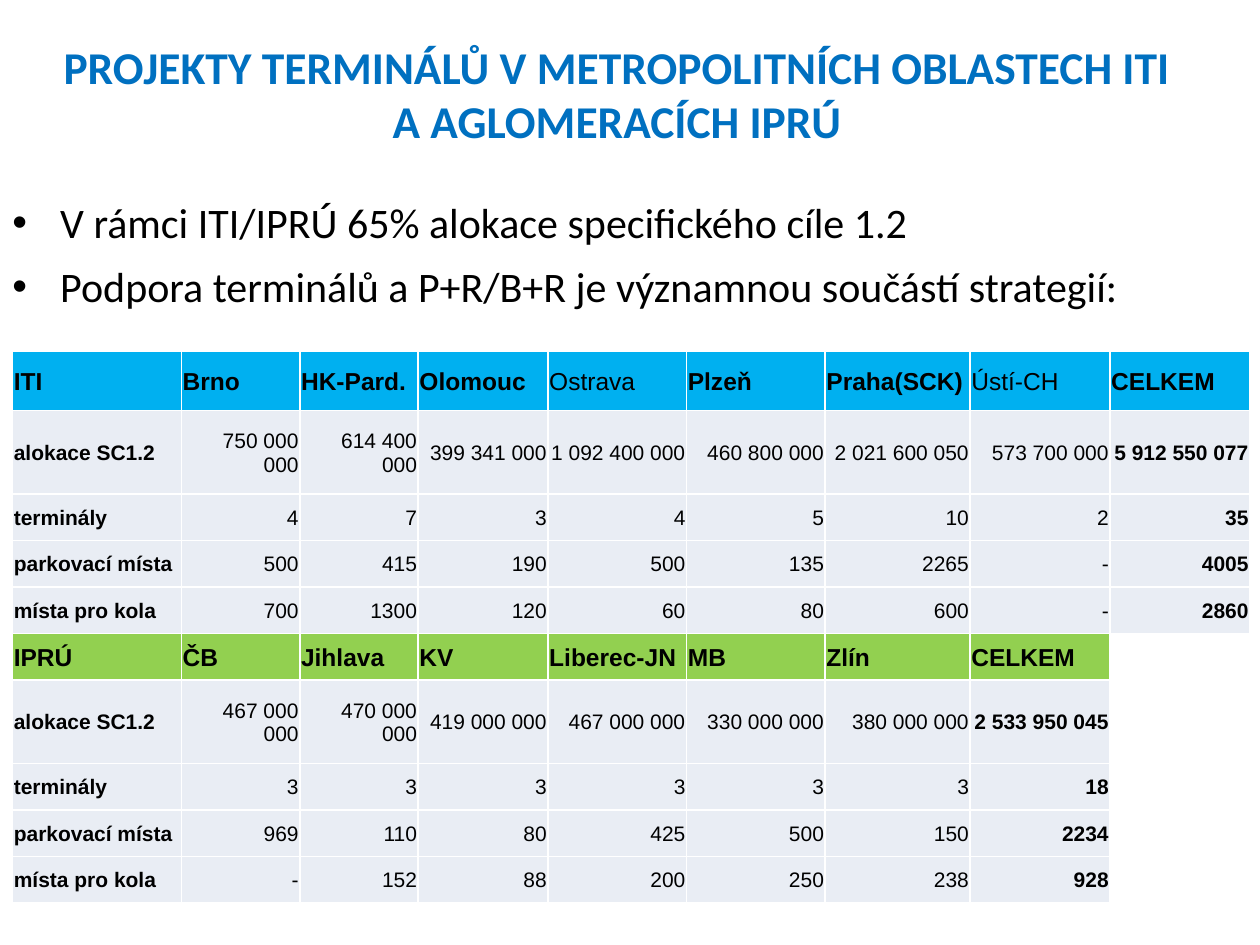
from lxml import etree
from pptx import Presentation, util as u
from pptx.dml import color
from pptx.enum import text
from pptx.oxml import ns

Inches, Pt = u.Inches, u.Pt
BLACK, WHITE, TITLE_BLUE = "000000", "FFFFFF", "0070C0"
ITI_BLUE, IPRU_GREEN, BODY_FILL = "00B0F0", "92D050", "E9EDF4"

COLUMN_WIDTHS = [1.34, 0.94, 0.94, 1.03, 1.1, 1.1, 1.15, 1.11, 1.11]
GROUPS = [
    (ITI_BLUE, [
        ["ITI", "Brno", "HK-Pard.", "Olomouc", "Ostrava", "Plzeň", "Praha(SCK)", "Ústí-CH", "CELKEM"],
        ["alokace SC1.2", "750 000 000", "614 400 000", "399 341 000", "1 092 400 000",
         "460 800 000", "2 021 600 050", "573 700 000", "5 912 550 077"],
        ["terminály", "4", "7", "3", "4", "5", "10", "2", "35"],
        ["parkovací místa", "500", "415", "190", "500", "135", "2265", "-", "4005"],
        ["místa pro kola", "700", "1300", "120", "60", "80", "600", "-", "2860"],
    ], [0.47, 0.66, 0.37, 0.37, 0.37]),
    (IPRU_GREEN, [
        ["IPRÚ", "ČB", "Jihlava", "KV", "Liberec-JN", "MB", "Zlín", "CELKEM"],
        ["alokace SC1.2", "467 000 000", "470 000 000", "419 000 000", "467 000 000",
         "330 000 000", "380 000 000", "2 533 950 045"],
        ["terminály", "3", "3", "3", "3", "3", "3", "18"],
        ["parkovací místa", "969", "110", "80", "425", "500", "150", "2234"],
        ["místa pro kola", "-", "152", "88", "200", "250", "238", "928"],
    ], [0.37, 0.66, 0.37, 0.37, 0.37]),
]
LIGHT_HEADINGS = {"Ostrava", "Ústí-CH"}


def rgb(hex_value):
    return color.RGBColor.from_string(hex_value)


class SlideBuilder:
    heading_font = "Calibri"
    table_font = "Arial"

    def __init__(self, slide):
        self.slide = slide

    def add_run(self, paragraph, words, size, font, hex_value=BLACK, bold=False):
        run = paragraph.add_run()
        run.text = words
        run.font.size = Pt(size)
        run.font.name = font
        run.font.bold = bold
        run.font.color.rgb = rgb(hex_value)

    def add_frame(self, left, top, width, height):
        box = self.slide.shapes.add_textbox(
            Inches(left), Inches(top), Inches(width), Inches(height))
        box.text_frame.word_wrap = True
        return box.text_frame

    def add_title(self, words, *place):
        paragraph = self.add_frame(*place).paragraphs[0]
        paragraph.alignment = text.PP_ALIGN.CENTER
        self.add_run(paragraph, words, 26, self.heading_font, TITLE_BLUE, True)

    def add_bullets(self, points, *place):
        frame = self.add_frame(*place)
        for index, words in enumerate(points):
            paragraph = frame.add_paragraph() if index else frame.paragraphs[0]
            props = paragraph._p.get_or_add_pPr()
            props.set("marL", str(Inches(0.38)))
            props.set("indent", str(-Inches(0.38)))
            etree.SubElement(props, ns.qn("a:buFont"), typeface="Arial")
            etree.SubElement(props, ns.qn("a:buChar"), char="•")
            if index:
                paragraph.space_before = Pt(4)
            paragraph.space_after = Pt(4)
            self.add_run(paragraph, words, 24, self.heading_font)

    def set_borders(self, cell):
        """Draw a thin white line on each side; lines must precede the fill."""
        props = cell._tc.get_or_add_tcPr()
        for position, side in enumerate(("lnL", "lnR", "lnT", "lnB")):
            line = etree.Element(ns.qn("a:" + side), w=str(Pt(1)))
            solid = etree.SubElement(line, ns.qn("a:solidFill"))
            etree.SubElement(solid, ns.qn("a:srgbClr"), val=WHITE)
            props.insert(position, line)

    def fill_cell(self, cell, words, fill, size, bold, align):
        cell.fill.solid()
        cell.fill.fore_color.rgb = rgb(fill)
        self.set_borders(cell)
        paragraph = cell.text_frame.paragraphs[0]
        paragraph.alignment = align
        self.add_run(paragraph, words, size, self.table_font, bold=bold)

    def add_allocation_table(self, groups, widths, left, top):
        heights = [height for _, _, group_heights in groups for height in group_heights]
        table = self.slide.shapes.add_table(
            len(heights), len(widths), Inches(left), Inches(top),
            Inches(sum(widths)), Inches(sum(heights))).table
        table.first_row = table.horz_banding = False
        for column, width in zip(table.columns, widths):
            column.width = Inches(width)
        for row, height in zip(table.rows, heights):
            row.height = Inches(height)
        for cell in table.iter_cells():
            cell.margin_left = cell.margin_right = cell.margin_top = Inches(0.01)
            cell.margin_bottom = 0
            cell.vertical_anchor = text.MSO_ANCHOR.MIDDLE
            cell.fill.background()

        lines = [(heading_fill, number == 0, values)
                 for heading_fill, rows, _ in groups
                 for number, values in enumerate(rows)]
        for row, (heading_fill, is_heading, values) in enumerate(lines):
            for column, words in enumerate(values):
                is_label = is_heading or column == 0
                is_total = column == len(values) - 1
                self.fill_cell(
                    table.cell(row, column), words,
                    fill=heading_fill if is_heading else BODY_FILL,
                    size=14 if is_heading else 12,
                    bold=(is_label or is_total) and words not in LIGHT_HEADINGS,
                    align=text.PP_ALIGN.LEFT if is_label else text.PP_ALIGN.RIGHT)


def main():
    deck = Presentation()
    deck.slide_width, deck.slide_height = Inches(10), Inches(7.5)
    builder = SlideBuilder(deck.slides.add_slide(deck.slide_layouts[6]))
    builder.add_title(
        "PROJEKTY TERMINÁLŮ V METROPOLITNÍCH OBLASTECH ITI A AGLOMERACÍCH IPRÚ",
        0.4, 0.26, 9, 1.25)
    builder.add_bullets(
        ["V rámci ITI/IPRÚ 65% alokace specifického cíle 1.2",
         "Podpora terminálů a P+R/B+R je významnou součástí strategií:"],
        0, 1.51, 10, 5.96)
    builder.add_allocation_table(GROUPS, COLUMN_WIDTHS, 0.1, 2.79)
    deck.save("out.pptx")


if __name__ == "__main__":
    main()
